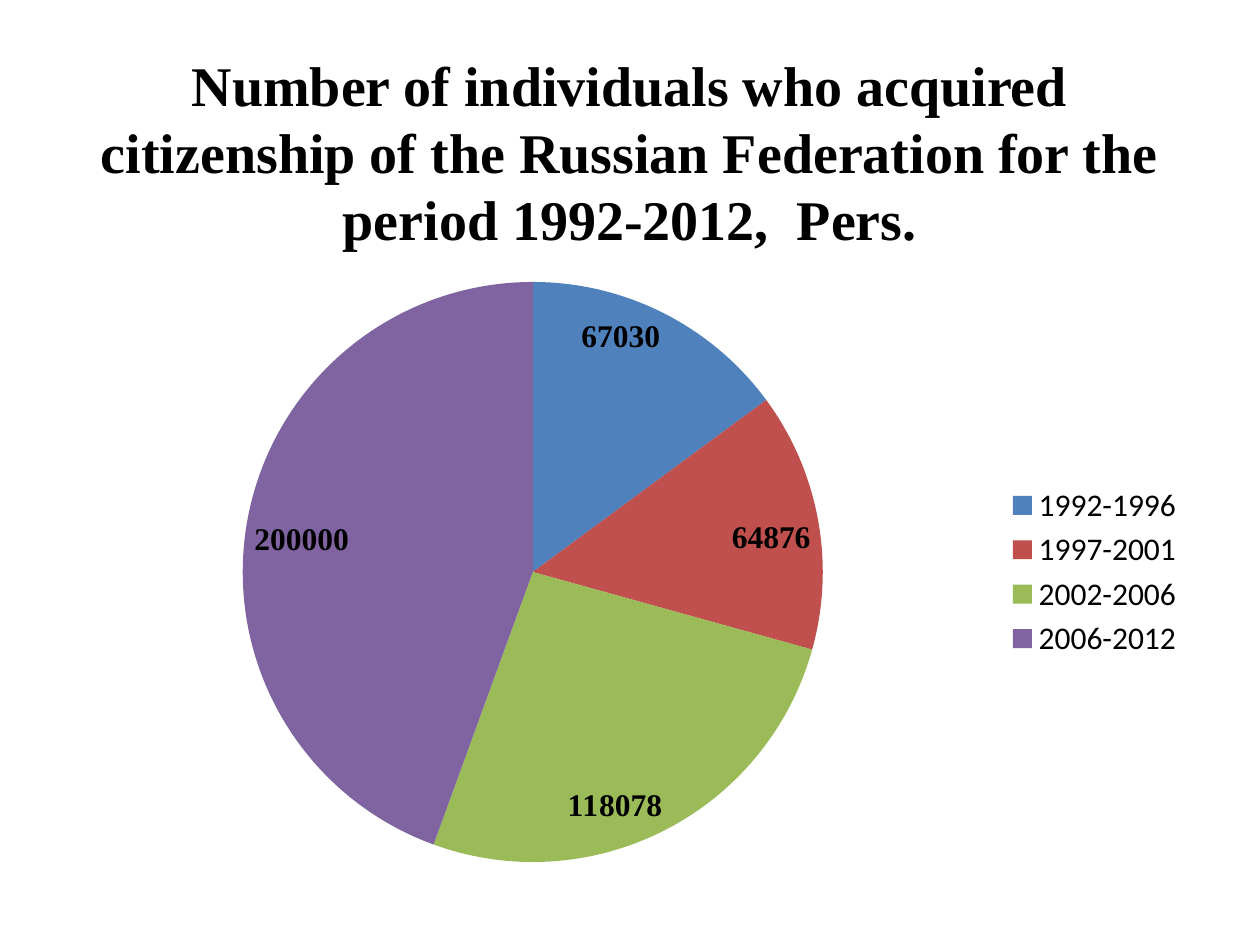
import pptx
import pptx.chart.data
import pptx.dml.color
import pptx.enum.chart
import pptx.enum.text
import pptx.util

Inches = pptx.util.Inches


def colour(value):
    return pptx.dml.color.RGBColor.from_string(value)


def format_font(font, name="Calibri", size=18, bold=False, fill="000000"):
    font.name = name
    font.size = pptx.util.Pt(size)
    font.bold = bold
    font.color.rgb = colour(fill)


deck = pptx.Presentation()
deck.slide_width = Inches(10)
deck.slide_height = Inches(7.5)
slide = deck.slides.add_slide(deck.slide_layouts[5])

title = slide.shapes.title
title.left, title.top = Inches(0.5), Inches(0.3)
title.width, title.height = Inches(9), Inches(1.8)
frame = title.text_frame
frame.word_wrap = True
frame.vertical_anchor = pptx.enum.text.MSO_ANCHOR.MIDDLE
para = frame.paragraphs[0]
para.alignment = pptx.enum.text.PP_ALIGN.CENTER
span = para.add_run()
span.text = (
    "Number of individuals who acquired citizenship of the "
    "Russian Federation for the period 1992-2012,  Pers."
)
format_font(span.font, name="Times New Roman", size=32, bold=True)

periods = [
    ("1992-1996", 67030, "4F81BD"),
    ("1997-2001", 64876, "C0504D"),
    ("2002-2006", 118078, "9BBB59"),
    ("2006-2012", 200000, "8064A2"),
]
data = pptx.chart.data.CategoryChartData()
data.categories = [period for period, count, fill in periods]
data.add_series("Series 1", [count for period, count, fill in periods])
chart = slide.shapes.add_chart(
    pptx.enum.chart.XL_CHART_TYPE.PIE,
    Inches(0.5), Inches(2.1), Inches(9), Inches(4.88), data,
).chart
format_font(chart.font)
chart.has_title = False
chart.has_legend = True
chart.legend.position = pptx.enum.chart.XL_LEGEND_POSITION.RIGHT
chart.legend.include_in_layout = False

plot = chart.plots[0]
plot.vary_by_categories = True
for index, (period, count, fill) in enumerate(periods):
    wedge = plot.series[0].points[index].format
    wedge.fill.solid()
    wedge.fill.fore_color.rgb = colour(fill)
    wedge.line.fill.background()

plot.has_data_labels = True
labels = plot.data_labels
labels.show_value = True
labels.show_percentage = False
labels.position = pptx.enum.chart.XL_LABEL_POSITION.INSIDE_END
format_font(labels.font, name="Times New Roman", bold=True)

deck.save("out.pptx")
